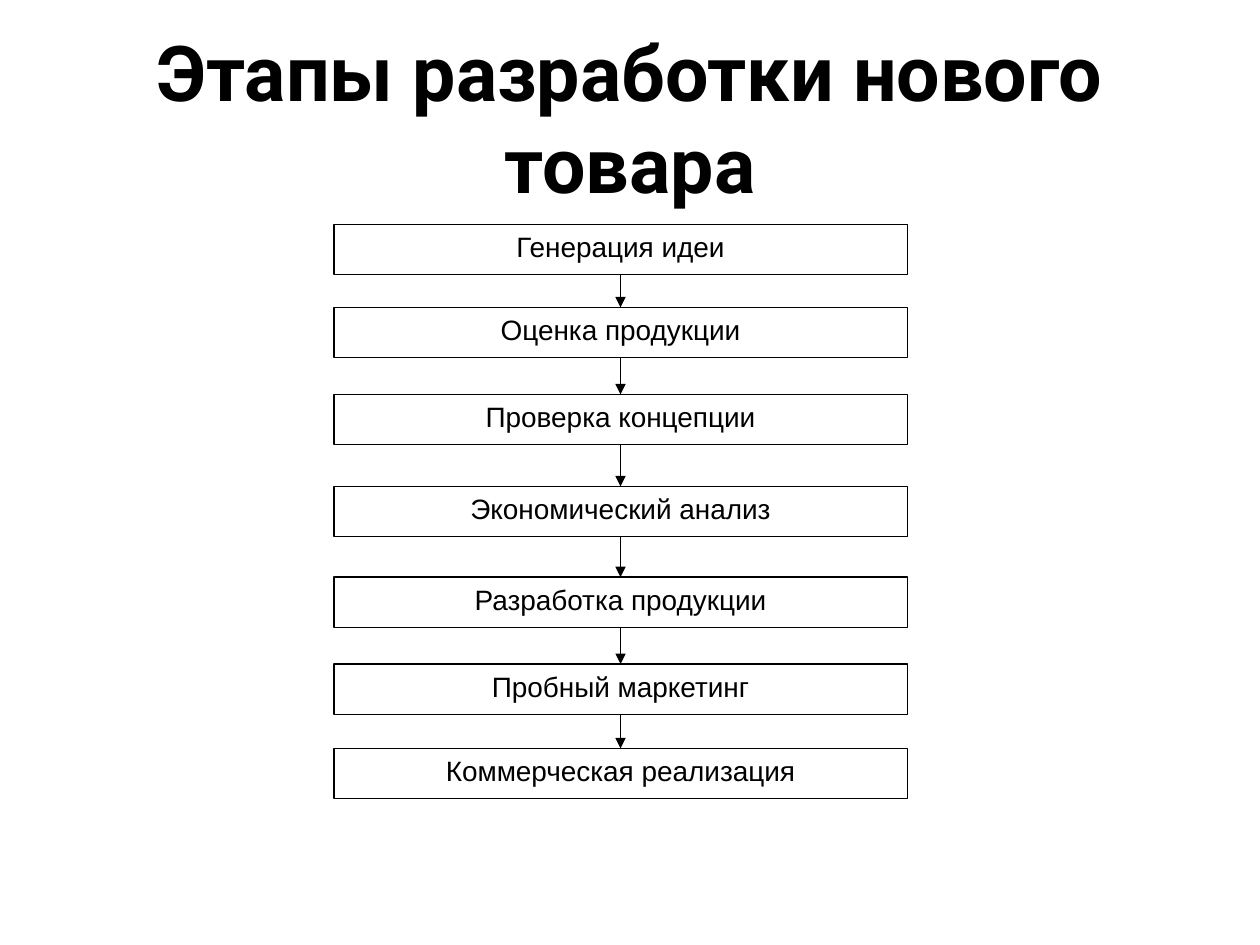
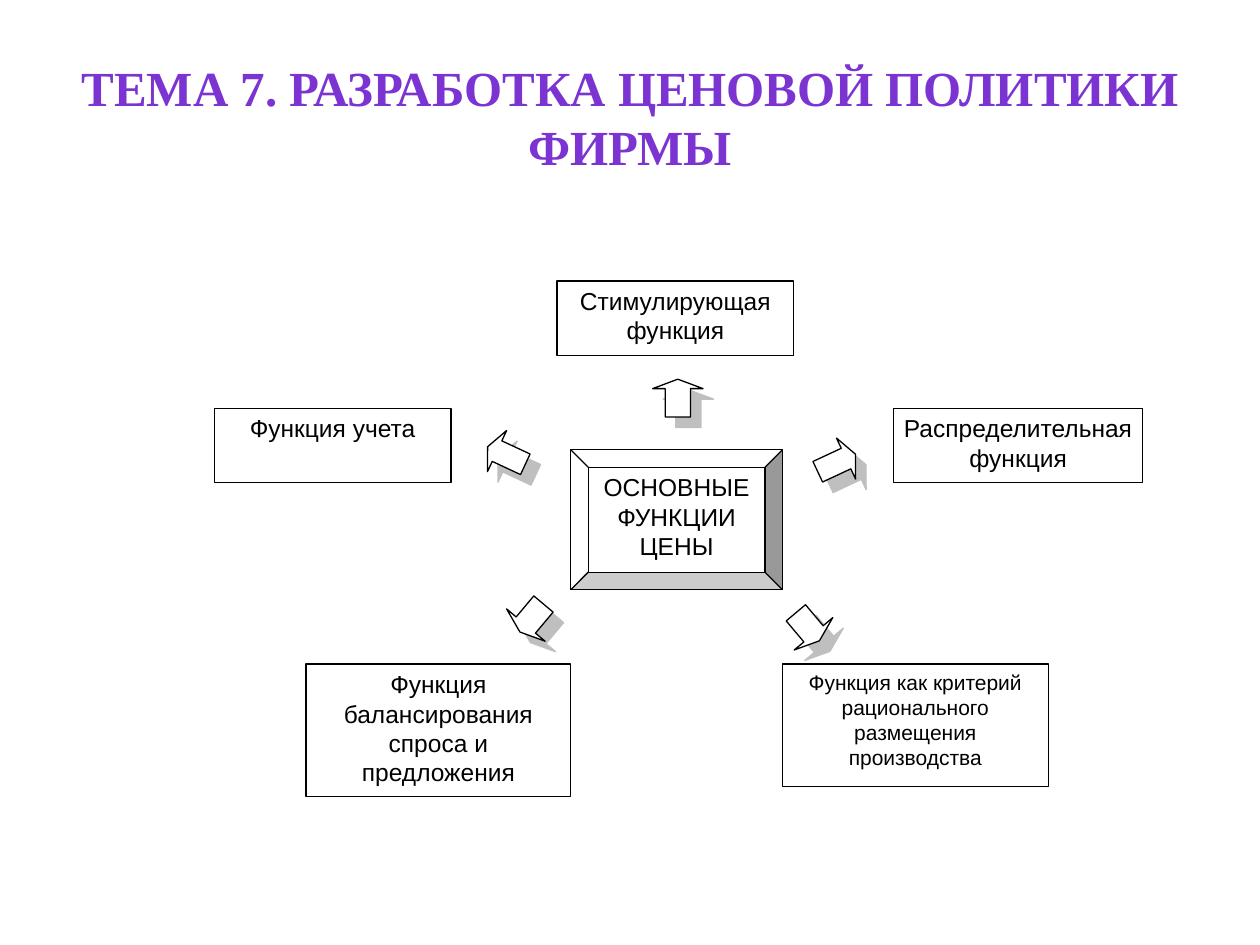
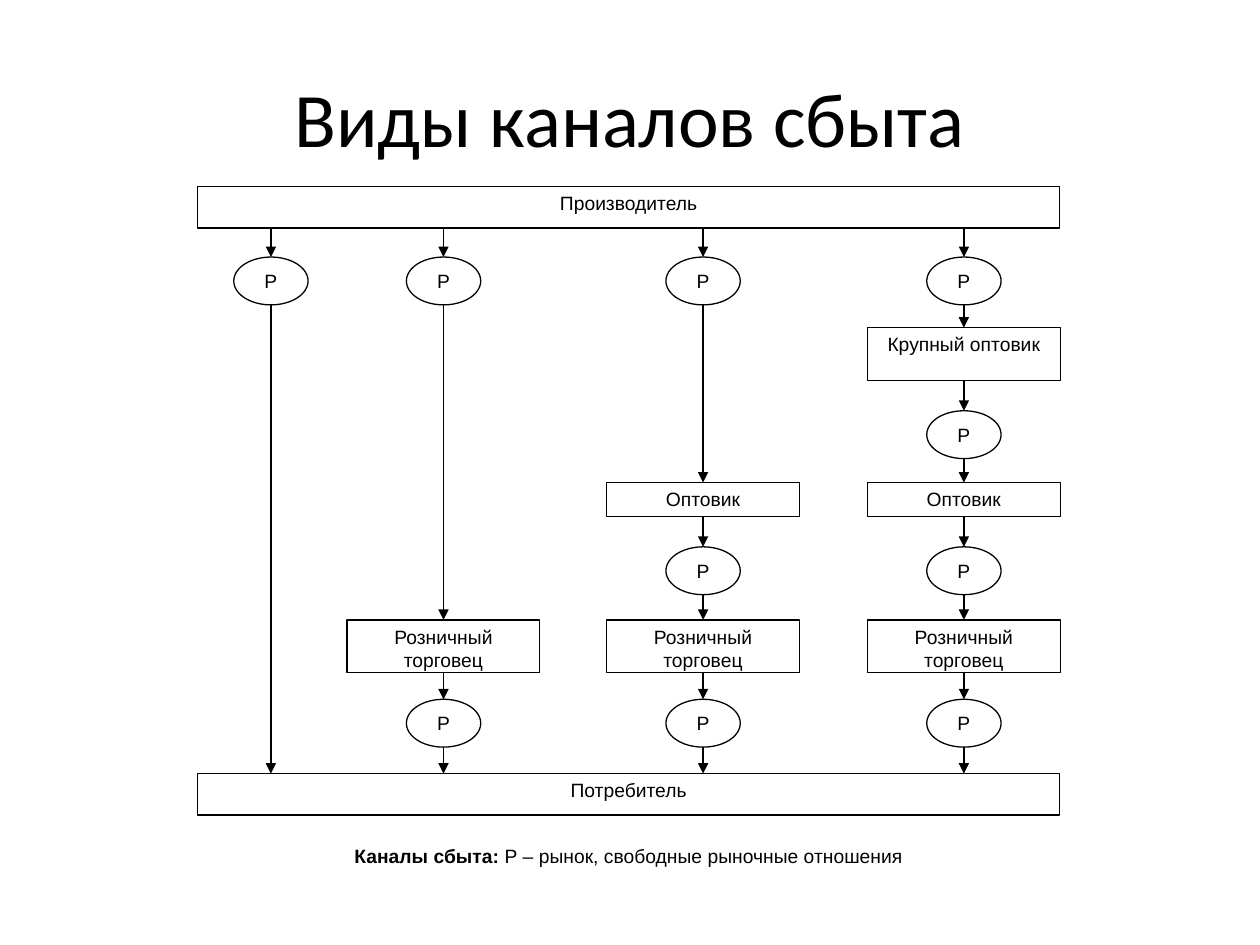
from pptx import Presentation
from pptx import util as u
from pptx.dml.color import RGBColor
from pptx.enum import shapes, text
from pptx.oxml import ns, parse_xml

COLOURS = {"ink": "000000", "paper": "FFFFFF", "shadow": "808080",
           "violet": "7B34D2", "violet mid": "7330C4",
           "violet dark": "3D1B67", "outline": "5E457C"}
BODY_FONT = "Arial"
LINE_WIDTH = 0.75
KINDS = shapes.MSO_SHAPE

# Slide 1: stages and the top of each box
STAGES_TITLE = "Этапы разработки нового товара"
STAGES = [
    ("Генерация идеи", 1.78),
    ("Оценка продукции", 2.44),
    ("Проверка концепции", 3.13),
    ("Экономический анализ", 3.86),
    ("Разработка продукции", 4.58),
    ("Пробный маркетинг", 5.27),
    ("Коммерческая реализация", 5.94),
]

# Slide 2: price functions as (label, box, size) and arrows as (box, rotation)
PRICE_TITLE = "ТЕМА 7. РАЗРАБОТКА ЦЕНОВОЙ ПОЛИТИКИ ФИРМЫ"
PRICE_CORE = ("ОСНОВНЫЕ ФУНКЦИИ ЦЕНЫ", (4.53, 3.57, 1.68, 1.11))
PRICE_FUNCTIONS = [
    ("Стимулирующая функция", (4.42, 2.23, 1.88, 0.59), 14),
    ("Распределительная функция", (7.09, 3.24, 1.98, 0.59), 14),
    ("Функция учета", (1.7, 3.24, 1.88, 0.59), 14),
    ("Функция как критерий рационального размещения производства",
     (6.21, 5.27, 2.11, 0.97), 12),
    ("Функция балансирования спроса и предложения",
     (2.43, 5.27, 2.1, 1.05), 14),
]
PRICE_ARROWS = [
    ((5.18, 3.01, 0.4, 0.3), 0),
    ((6.46, 3.51, 0.36, 0.33), 65),
    ((3.84, 3.45, 0.36, 0.33), 295),
    ((4.02, 4.76, 0.4, 0.29), 220),
    ((6.21, 4.83, 0.4, 0.29), 140),
]

# Slide 3: rows as (label, top, height), channels as (centre, rows passed)
CHANNELS_TITLE = "Виды каналов сбыта"
MARKET = "Р"
LEVELS = {
    "market 1": (MARKET, 2.04, 0.38),
    "big wholesaler": ("Крупный оптовик", 2.6, 0.42),
    "market 2": (MARKET, 3.26, 0.38),
    "wholesaler": ("Оптовик", 3.83, 0.27),
    "market 3": (MARKET, 4.34, 0.38),
    "retailer": ("Розничный торговец", 4.92, 0.42),
    "market 4": (MARKET, 5.55, 0.38),
}
CHANNELS = [
    (2.15, ["market 1"]),
    (3.52, ["market 1", "retailer", "market 4"]),
    (5.58, ["market 1", "wholesaler", "market 3", "retailer", "market 4"]),
    (7.65, list(LEVELS)),
]
PRODUCER = ("Производитель", (1.57, 1.48, 6.84, 0.33))
CONSUMER = ("Потребитель", (1.57, 6.14, 6.84, 0.33))
LEGEND = ("Каналы сбыта: ", "Р – рынок, свободные рыночные отношения")
LEGEND_BOX = (1.57, 6.66, 6.84, 0.47)


def rgb(name):
    return RGBColor.from_string(COLOURS[name])


def inches(box):
    return [u.Inches(length) for length in box]


def add_xml(parent, tag, attributes="", content="", index=None):
    child = parse_xml(f'<a:{tag} {ns.nsdecls("a")} {attributes}>{content}</a:{tag}>')
    parent.insert(len(parent) if index is None else index, child)


def style_font(font, name, size, bold=False):
    font.name, font.size, font.bold = name, u.Pt(size), bold
    font.color.rgb = rgb("ink")


def titled_slide(deck, wording, font, size, bold=False):
    slide = deck.slides.add_slide(deck.slide_layouts[5])
    title = slide.shapes.title
    title.left, title.top, title.width, title.height = inches((0.5, 0.3, 9, 1.25))
    frame = title.text_frame
    frame.text = wording
    frame.auto_size = text.MSO_AUTO_SIZE.NONE
    frame.vertical_anchor = text.MSO_ANCHOR.MIDDLE
    frame.paragraphs[0].alignment = text.PP_ALIGN.CENTER
    style_font(frame.paragraphs[0].runs[0].font, font, size, bold)
    return slide


def format_frame(frame):
    frame.word_wrap = True
    frame.vertical_anchor = text.MSO_ANCHOR.TOP
    frame.margin_left = frame.margin_right = u.Inches(0.07)
    frame.margin_top = frame.margin_bottom = u.Inches(0.04)
    frame.paragraphs[0].alignment = text.PP_ALIGN.CENTER


def add_block(slide, box, label="", size=11, kind=KINDS.RECTANGLE):
    block = slide.shapes.add_shape(kind, *inches(box))
    block.shadow.inherit = False
    block.fill.solid()
    block.fill.fore_color.rgb = rgb("paper")
    block.line.color.rgb = rgb("ink")
    block.line.width = u.Pt(LINE_WIDTH)
    if label:
        block.text_frame.text = label
        format_frame(block.text_frame)
        style_font(block.text_frame.paragraphs[0].runs[0].font, BODY_FONT, size)
    return block


def add_arrow(slide, upper, lower, x):
    """Arrow down from one block to the next, glued at the middle of boxes."""
    arrow = slide.shapes.add_connector(
        shapes.MSO_CONNECTOR.STRAIGHT, x, upper.top + upper.height, x, lower.top)
    for block, join, side in ((upper, arrow.begin_connect, 2),
                              (lower, arrow.end_connect, 0)):
        centred = abs(block.left + block.width // 2 - x) < u.Inches(0.01)
        if centred and block.auto_shape_type == KINDS.RECTANGLE:
            join(block, side)
    arrow.line.color.rgb = rgb("ink")
    arrow.line.width = u.Pt(LINE_WIDTH)
    properties = arrow.element.spPr
    add_xml(properties.find(ns.qn("a:ln")), "tailEnd", 'type="triangle"')
    add_xml(properties, "effectLst")


def build_stages(deck):
    slide = titled_slide(deck, STAGES_TITLE, "Roboto", 44, bold=True)
    boxes = [add_block(slide, (2.65, top, 4.55, 0.4), label, 16)
             for label, top in STAGES]
    for upper, lower in zip(boxes, boxes[1:]):
        add_arrow(slide, upper, lower, upper.left + upper.width // 2)


def paint_violet(title):
    """Vertical violet gradient with a thin outline."""
    properties = next(title.element.iter(ns.qn("a:rPr")))
    properties.remove(properties.find(ns.qn("a:solidFill")))
    stops = [(0, "violet dark"), (43, "violet"),
             (48, "violet mid"), (100, "violet dark")]
    stop_list = "".join(
        f'<a:gs pos="{place * 1000}"><a:srgbClr val="{COLOURS[name]}"/></a:gs>'
        for place, name in stops)
    add_xml(properties, "ln", f'w="{u.Pt(0.71)}"',
            f'<a:solidFill><a:srgbClr val="{COLOURS["outline"]}"/></a:solidFill>', 0)
    add_xml(properties, "gradFill", 'rotWithShape="1"',
            f'<a:gsLst>{stop_list}</a:gsLst><a:lin ang="5400000"/>', 1)


def build_price(deck):
    slide = titled_slide(deck, PRICE_TITLE, "Times New Roman", 28, bold=True)
    paint_violet(slide.shapes.title)
    label, box = PRICE_CORE
    add_block(slide, box, label, 14, KINDS.BEVEL)
    for label, box, size in PRICE_FUNCTIONS:
        add_block(slide, box, label, size)
    for box, rotation in PRICE_ARROWS:
        arrow = add_block(slide, box, kind=KINDS.UP_ARROW)
        arrow.adjustments[0], arrow.adjustments[1] = 0.5, 0.25
        arrow.rotation = rotation
        add_xml(arrow.element.spPr.find(ns.qn("a:effectLst")), "outerShdw",
                f'dist="{u.Pt(8.5)}" dir="2700000" rotWithShape="0"',
                f'<a:srgbClr val="{COLOURS["shadow"]}"><a:alpha val="50000"/>'
                '</a:srgbClr>')


def build_channels(deck):
    slide = titled_slide(deck, CHANNELS_TITLE, "Calibri", 44)
    producer, consumer = (add_block(slide, box, label)
                          for label, box in (PRODUCER, CONSUMER))
    for centre, levels in CHANNELS:
        chain = [producer]
        for level in levels:
            label, top, height = LEVELS[level]
            width, kind = ((0.59, KINDS.OVAL) if label == MARKET
                           else (1.53, KINDS.RECTANGLE))
            box = (centre - width / 2, top, width, height)
            chain.append(add_block(slide, box, label, kind=kind))
        chain.append(consumer)
        for upper, lower in zip(chain, chain[1:]):
            add_arrow(slide, upper, lower, u.Inches(centre))

    # Legend
    frame = slide.shapes.add_textbox(*inches(LEGEND_BOX)).text_frame
    format_frame(frame)
    for wording, bold in zip(LEGEND, (True, False)):
        run = frame.paragraphs[0].add_run()
        run.text = wording
        style_font(run.font, BODY_FONT, 11, bold)


def main():
    deck = Presentation()
    deck.slide_width, deck.slide_height = u.Inches(10), u.Inches(7.5)
    build_stages(deck)
    build_price(deck)
    build_channels(deck)
    deck.save("out.pptx")


if __name__ == "__main__":
    main()
